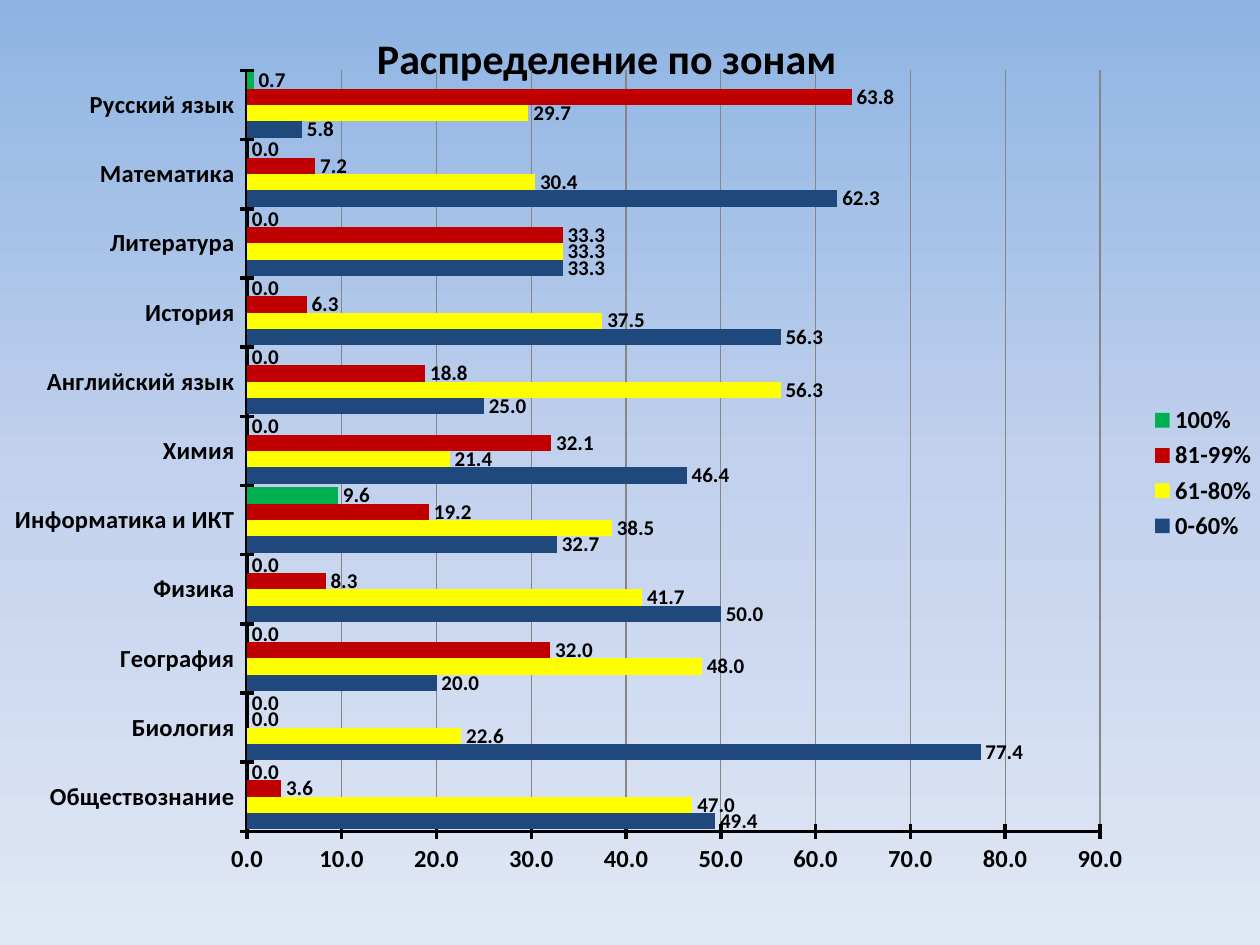
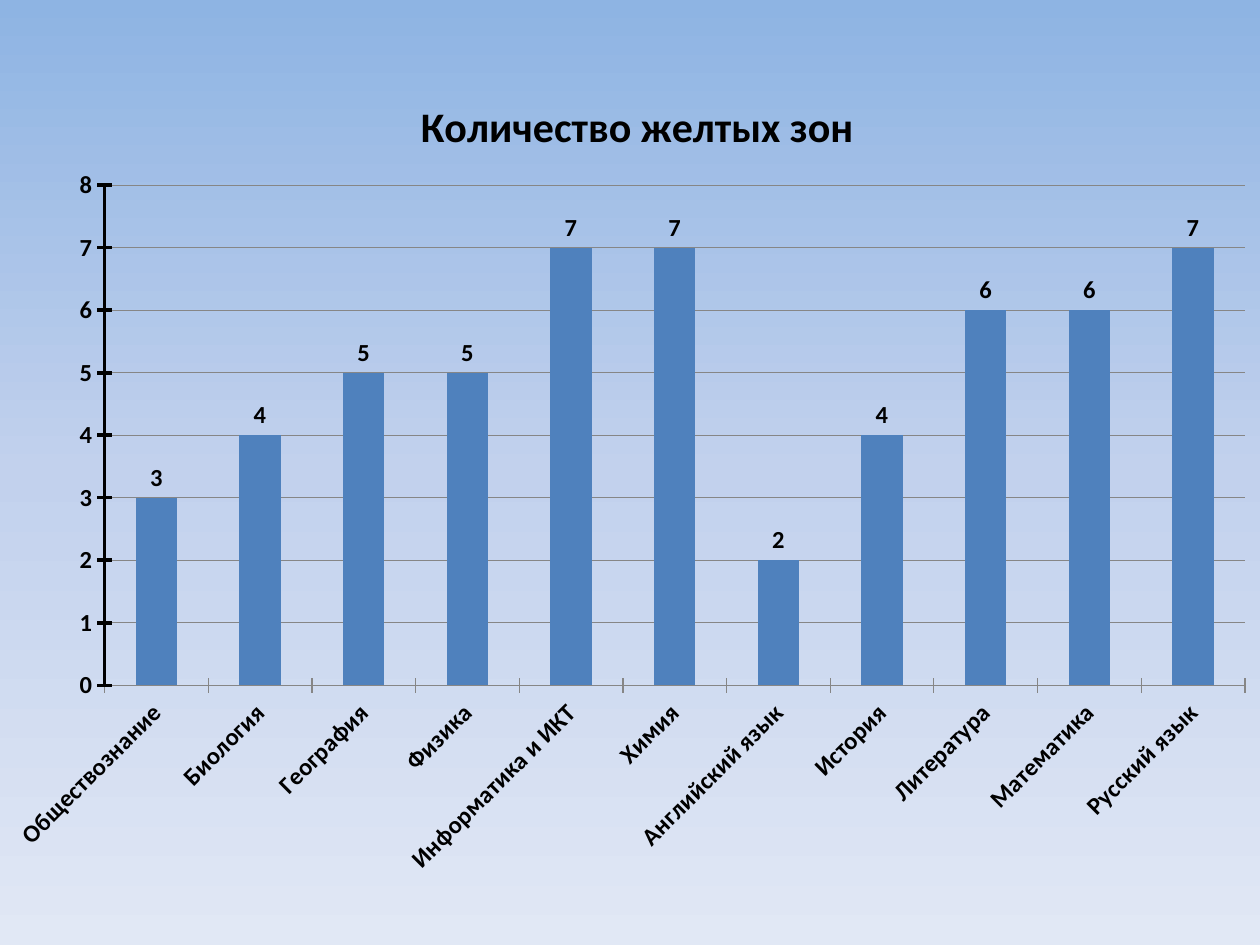
import copy
import pptx
import pptx.chart.data
import pptx.dml.color
import pptx.enum.chart
import pptx.enum.text
import pptx.oxml
import pptx.oxml.ns
import pptx.util

INCH = pptx.util.Inches
KIND = pptx.enum.chart.XL_CHART_TYPE
TICK = pptx.enum.chart.XL_TICK_MARK
FONT = "Calibri"
HUES = {"ink": "000000", "grid": "868686", "sky": "8EB4E3", "mid": "C2D1ED",
        "pale": "E1E8F5", "navy": "1F497D", "sun": "FFFF00", "red": "C00000",
        "green": "00B050", "blue": "4F81BD"}
BOX = (-0.09, 0.43, 10.17, 6.65)
TOPICS = ["Обществознание", "Биология", "География", "Физика", "Информатика и ИКТ",
          "Химия", "Английский язык", "История", "Литература", "Математика",
          "Русский язык"]
ZONES = [
    ("0-60%", "navy", [49.4, 77.4, 20, 50, 32.7, 46.4, 25, 56.3, 33.3, 62.3, 5.8]),
    ("61-80%", "sun", [47, 22.6, 48, 41.7, 38.5, 21.4, 56.3, 37.5, 33.3, 30.4, 29.7]),
    ("81-99%", "red", [3.6, 0, 32, 8.3, 19.2, 32.1, 18.8, 6.3, 33.3, 7.2, 63.8]),
    ("100%", "green", [0, 0, 0, 0, 9.6, 0, 0, 0, 0, 0, 0.7]),
]
COUNTS = [("Количество желтых зон", "blue", [3, 4, 5, 5, 7, 7, 2, 4, 6, 6, 7])]


def hue(name):
    return pptx.dml.color.RGBColor.from_string(HUES[name])


def put(item, **marks):
    for key, value in marks.items():
        setattr(item, key, value)


def style(font, size):
    put(font, name=FONT, size=pptx.util.Pt(size), bold=True)
    font.color.rgb = hue("ink")


def rule(line, name, width):
    line.color.rgb = hue(name)
    line.width = pptx.util.Pt(width)


def paint(master):
    """Shared vertical gradient."""
    fill = master.background.fill
    fill.gradient()
    fill.gradient_angle = 270
    stops = master.element.find(".//" + pptx.oxml.ns.qn("a:gsLst"))
    stops.insert(1, copy.deepcopy(stops[0]))
    for stop, name, spot in zip(fill.gradient_stops, ("sky", "mid", "pale"), (0, 0.5, 1)):
        stop.color.rgb = hue(name)
        stop.position = spot


def place(part, box, left, top, size=None):
    """Fix a chart part at slide inches, as shares of the chart box."""
    marks = {"xMode": "edge", "yMode": "edge",
             "x": (left - box[0]) / box[2], "y": (top - box[1]) / box[3]}
    if size:
        marks = {"layoutTarget": "inner", **marks,
                 "w": size[0] / box[2], "h": size[1] / box[3]}
    body = "".join(
        f'<c:{key} val="{value if isinstance(value, str) else round(value, 4)}"/>'
        for key, value in marks.items())
    node = pptx.oxml.parse_xml(
        f'<c:layout {pptx.oxml.ns.nsdecls("c")}>'
        f'<c:manualLayout>{body}</c:manualLayout></c:layout>')
    for old in part.findall(pptx.oxml.ns.qn("c:layout")):
        part.remove(old)
    text = part.find(pptx.oxml.ns.qn("c:tx"))
    part.insert(0 if text is None else 1, node)


def graph(slide, box, kind, rows, form, sizes, gap, area):
    """Bar chart with the common axes, grid and value labels."""
    data = pptx.chart.data.CategoryChartData(number_format=form)
    data.categories = TOPICS
    for name, _, values in rows:
        data.add_series(name, values)
    chart = slide.shapes.add_chart(kind, *map(INCH, box), data).chart
    style(chart.font, sizes["axis"])
    put(chart, has_title=False, has_legend=False)

    # Bars and labels
    plot = chart.plots[0]
    put(plot, gap_width=gap, overlap=0, vary_by_categories=False)
    for bars, (_, name, _) in zip(plot.series, rows):
        bars.format.fill.solid()
        bars.format.fill.fore_color.rgb = hue(name)
        bars.invert_if_negative = False
        tags = bars.data_labels
        put(tags, show_value=True, number_format=form, number_format_is_linked=False,
            position=pptx.enum.chart.XL_LABEL_POSITION.OUTSIDE_END)
        style(tags.font, sizes["tag"])

    # Axes and grid
    for axis in (chart.category_axis, chart.value_axis):
        put(axis, major_tick_mark=TICK.CROSS, minor_tick_mark=TICK.NONE,
            has_major_gridlines=axis is chart.value_axis)
        style(axis.tick_labels.font, sizes["axis"])
        rule(axis.format.line, "ink", 2)
    axis = chart.value_axis
    rule(axis.major_gridlines.format.line, "grid", 0.75)
    put(axis.tick_labels, number_format=form, number_format_is_linked=False)
    place(chart.element.find(".//" + pptx.oxml.ns.qn("c:plotArea")), box,
          *area[:2], area[2:])
    return chart


def spread(slide, box):
    """Bars by zone, with the title over the plot."""
    title = slide.shapes.title
    put(title, left=INCH(2.87), top=INCH(0.21), width=INCH(3.89), height=INCH(0.5))
    put(title.text_frame, text="Распределение по зонам", word_wrap=False)
    style(title.text_frame.paragraphs[0].runs[0].font, 24)

    chart = graph(slide, box, KIND.BAR_CLUSTERED, ZONES, "0.0",
                  {"axis": 14, "tag": 12}, 24, (1.96, 0.56, 6.77, 6.04))
    put(chart.value_axis, minimum_scale=0, maximum_scale=90, major_unit=10)
    chart.has_legend = True
    put(chart.legend, include_in_layout=False,
        position=pptx.enum.chart.XL_LEGEND_POSITION.RIGHT)
    style(chart.legend.font, 14)


def count(slide, box):
    """Columns with the number of yellow zones."""
    chart = graph(slide, box, KIND.COLUMN_CLUSTERED, COUNTS, "0",
                  {"axis": 14, "tag": 14}, 150, (0.83, 1.47, 9.05, 3.97))
    put(chart.value_axis, minimum_scale=0, maximum_scale=8, major_unit=1)
    axis = chart.category_axis
    rule(axis.format.line, "grid", 0.75)
    slant = axis._element.find(".//" + pptx.oxml.ns.qn("a:bodyPr"))
    slant.set("rot", "-2700000")
    head = chart.chart_title
    head.text_frame.text = COUNTS[0][0]
    style(head.text_frame.paragraphs[0].runs[0].font, 24)
    place(head._element, box, 3.28, 0.72)


def main():
    deck = pptx.Presentation()
    put(deck, slide_width=INCH(10), slide_height=INCH(7.5))
    paint(deck.slide_master)
    for draw, layout in ((spread, 5), (count, 6)):
        draw(deck.slides.add_slide(deck.slide_layouts[layout]), BOX)
    deck.save("out.pptx")


if __name__ == "__main__":
    main()
